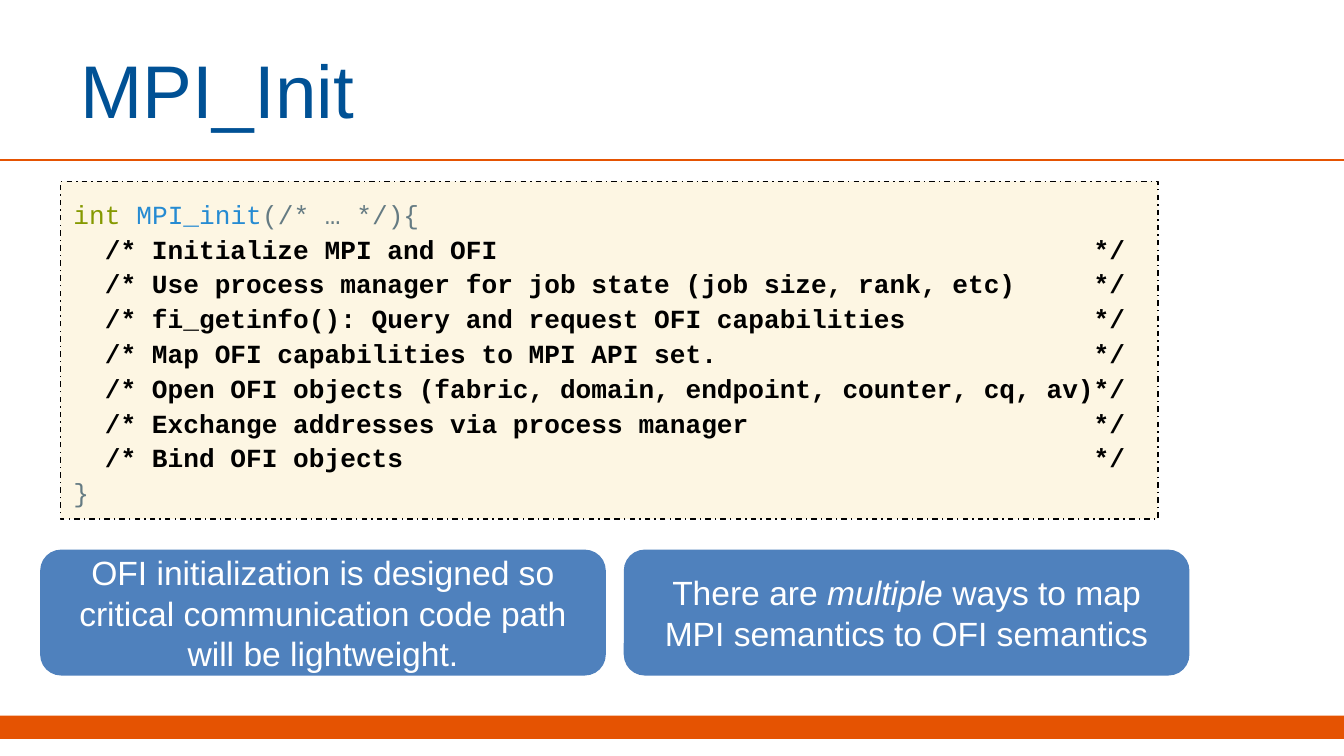
from typing import NamedTuple

from lxml.etree import SubElement
from pptx import Presentation
from pptx.dml.color import RGBColor
from pptx.enum.dml import MSO_LINE
from pptx.enum.shapes import MSO_CONNECTOR, MSO_SHAPE
from pptx.enum.text import MSO_ANCHOR, PP_ALIGN
from pptx.oxml.ns import qn
from pptx.util import Cm, Pt

COLORS = {
    "title": "005195", "accent": "E55302", "paper": "FDF6E3", "black": "000000",
    "keyword": "859900", "name": "268BD2", "plain": "657B83",
    "callout": "4F81BD", "white": "FFFFFF",
}
SLIDE_W, SLIDE_H = 25.4, 14.29
LINE_SPACING = 1.11


class Run(NamedTuple):
    text: str
    color: str
    bold: bool = False
    italic: bool = False


class Box(NamedTuple):
    left: float
    top: float
    width: float
    height: float


COMMENTS = [
    "Initialize MPI and OFI",
    "Use process manager for job state (job size, rank, etc)",
    "fi_getinfo(): Query and request OFI capabilities",
    "Map OFI capabilities to MPI API set.",
    "Open OFI objects (fabric, domain, endpoint, counter, cq, av)",
    "Exchange addresses via process manager",
    "Bind OFI objects",
]
COMMENT_WIDTH = max(map(len, COMMENTS))
CODE = [
    [Run("int", "keyword"), Run(" ", "plain"), Run("MPI_init", "name"),
     Run("(/* … */){", "plain")],
    *[[Run(f"  /* {c:<{COMMENT_WIDTH}}*/", "black", bold=True)] for c in COMMENTS],
    [Run("}", "plain")],
]
CALLOUTS = [
    [Run("OFI initialization is designed so critical communication code path "
         "will be lightweight.", "white")],
    [Run("There are ", "white"), Run("multiple", "white", italic=True),
     Run(" ways to map MPI semantics to OFI semantics", "white")],
]


def rgb(name: str) -> RGBColor:
    return RGBColor.from_string(COLORS[name])


def add_block(s, kind: MSO_SHAPE, box: Box, fill: str):
    """Add a filled shape without line or shadow."""
    sp = s.shapes.add_shape(kind, *map(Cm, box))
    sp.shadow.inherit = False
    sp.fill.solid()
    sp.fill.fore_color.rgb = rgb(fill)
    sp.line.fill.background()
    return sp


def set_frame(tf, anchor: MSO_ANCHOR) -> None:
    tf.word_wrap = True
    tf.vertical_anchor = anchor
    tf.margin_left = tf.margin_right = tf.margin_top = tf.margin_bottom = Cm(0.25)


def add_runs(p, runs: list[Run], font: str, size: float) -> None:
    for run in runs:
        r = p.add_run()
        r.text = run.text
        r.font.name, r.font.size = font, Pt(size)
        r.font.bold, r.font.italic = run.bold, run.italic
        r.font.color.rgb = rgb(run.color)


def add_title(s, text: str) -> None:
    sp = s.shapes.title
    sp.left, sp.top, sp.width, sp.height = map(Cm, Box(1.27, 0.48, 20.75, 2.39))
    set_frame(sp.text_frame, MSO_ANCHOR.MIDDLE)
    p = sp.text_frame.paragraphs[0]
    p.alignment = PP_ALIGN.LEFT
    add_runs(p, [Run(text, "title")], "Arial", 40)


def add_rule(s, y: float) -> None:
    line = s.shapes.add_connector(
        MSO_CONNECTOR.STRAIGHT, Cm(0), Cm(y), Cm(SLIDE_W), Cm(y))
    line.line.color.rgb = rgb("accent")
    line.line.width = Pt(1)
    SubElement(line._element.spPr, qn("a:effectLst"))


def add_code(s, box: Box, lines: list[list[Run]]) -> None:
    sp = add_block(s, MSO_SHAPE.RECTANGLE, box, "paper")
    sp.line.color.rgb = rgb("black")
    sp.line.width = Pt(0.75)
    sp.line.dash_style = MSO_LINE.DASH_DOT
    tf = sp.text_frame
    set_frame(tf, MSO_ANCHOR.TOP)
    for i, runs in enumerate(lines):
        p = tf.add_paragraph() if i else tf.paragraphs[0]
        p.alignment = PP_ALIGN.LEFT
        p.line_spacing = LINE_SPACING
        add_runs(p, runs, "Courier New", 14)


def add_callout(s, box: Box, runs: list[Run]) -> None:
    sp = add_block(s, MSO_SHAPE.ROUNDED_RECTANGLE, box, "callout")
    set_frame(sp.text_frame, MSO_ANCHOR.MIDDLE)
    p = sp.text_frame.paragraphs[0]
    p.alignment = PP_ALIGN.CENTER
    add_runs(p, runs, "Arial", 18)


def main() -> None:
    prs = Presentation()
    prs.slide_width, prs.slide_height = Cm(SLIDE_W), Cm(SLIDE_H)
    s = prs.slides.add_slide(prs.slide_layouts[5])
    add_block(s, MSO_SHAPE.RECTANGLE, Box(0, 13.53, SLIDE_W, 0.44), "accent")
    add_rule(s, 3.02)
    add_title(s, "MPI_Init")
    add_code(s, Box(1.14, 3.43, 20.75, 6.38), CODE)
    width, gap = 10.69, 0.34
    for i, runs in enumerate(CALLOUTS):
        add_callout(s, Box(0.76 + i * (width + gap), 10.39, width, 2.38), runs)
    prs.save("out.pptx")


if __name__ == "__main__":
    main()
